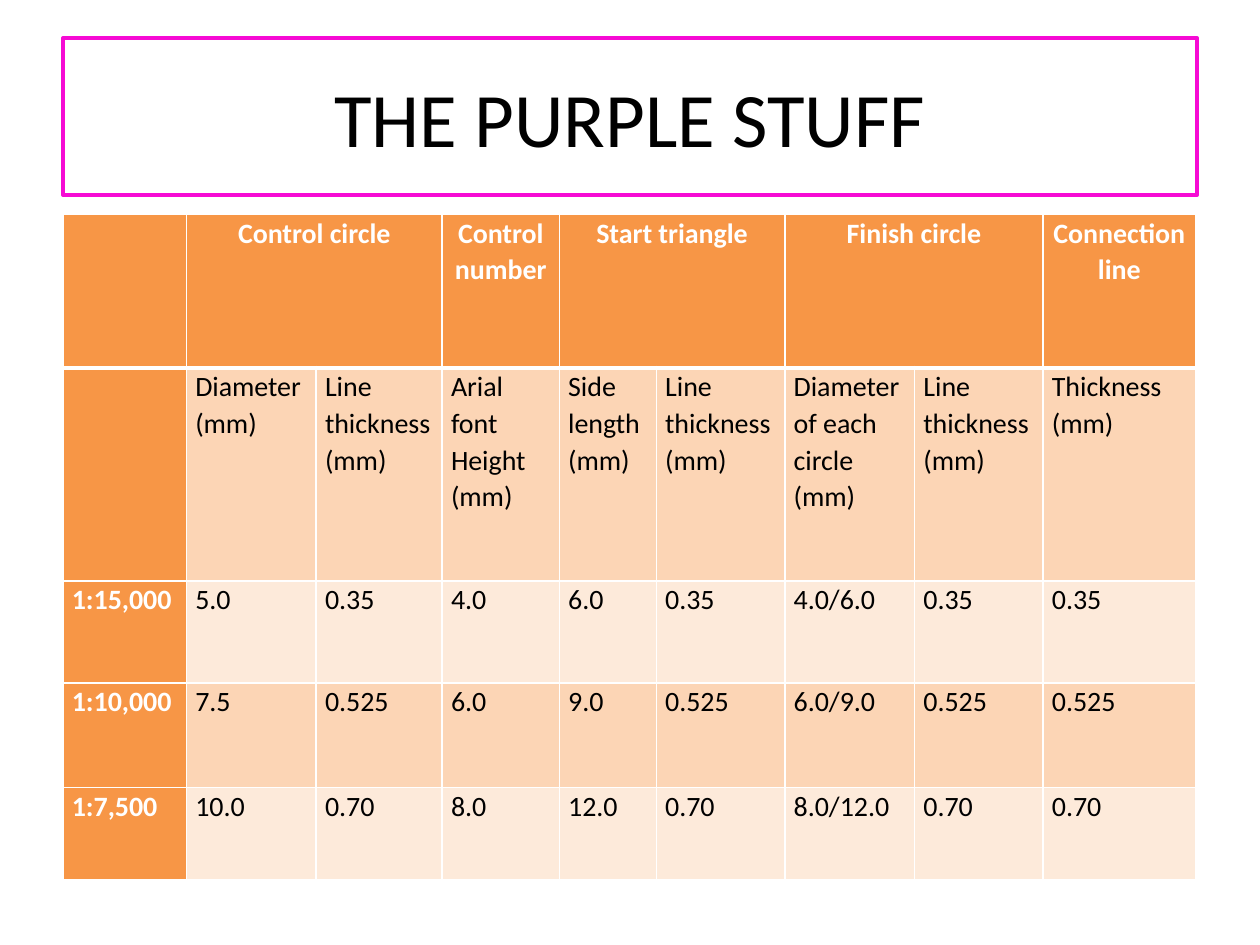
from lxml import etree
from pptx import Presentation
from pptx.dml.color import RGBColor
from pptx.enum.text import MSO_ANCHOR, PP_ALIGN
from pptx.oxml.ns import qn
from pptx.util import Inches, Pt

CENTER, LEFT = PP_ALIGN.CENTER, PP_ALIGN.LEFT
MIDDLE = MSO_ANCHOR.MIDDLE
COLORS = {
    "magenta": "F60AD4",
    "orange": "F79646",
    "peach": "FCD5B5",
    "cream": "FDEADA",
    "white": "FFFFFF",
    "black": "000000",
}


def rgb(name):
    return RGBColor.from_string(COLORS[name])


def write(tf, text, size=16, color="black", bold=False, align=LEFT, spacing=1.07):
    tf.word_wrap = True
    for i, line in enumerate(text.split("\n")):
        p = tf.paragraphs[0] if i == 0 else tf.add_paragraph()
        p.alignment = align
        p.line_spacing = spacing
        r = p.add_run()
        r.text = line
        r.font.name = "Calibri"
        r.font.size = Pt(size)
        r.font.bold = bold
        r.font.color.rgb = rgb(color)


prs = Presentation()
prs.slide_width, prs.slide_height = Inches(10), Inches(7.5)
W, H = prs.slide_width, prs.slide_height
s = prs.slides.add_slide(prs.slide_layouts[5])

title = s.shapes.title
title.left, title.top = int(W * 0.05), int(H * 0.04)
title.width, title.height = int(W * 0.9), Inches(1.25)
title.line.color.rgb = rgb("magenta")
title.line.width = Pt(2)
title.text_frame.vertical_anchor = MIDDLE
write(title.text_frame, "THE PURPLE STUFF", size=44, align=CENTER, spacing=1.0)

thickness = "Line thickness (mm)"
rows = [
    ["", "Control circle", "", "Control number", "Start triangle", "",
     "Finish circle", "", "Connection line"],
    ["", "Diameter (mm)", thickness, "Arial font\nHeight (mm)", "Side length (mm)",
     thickness, "Diameter of each circle (mm)", thickness, "Thickness (mm)"],
    ["1:15,000", "5.0", "0.35", "4.0", "6.0", "0.35", "4.0/6.0", "0.35", "0.35"],
    ["1:10,000", "7.5", "0.525", "6.0", "9.0", "0.525", "6.0/9.0", "0.525", "0.525"],
    ["1:7,500", "10.0", "0.70", "8.0", "12.0", "0.70", "8.0/12.0", "0.70", "0.70"],
]
col_widths = [0.98, 1.03, 1, 0.93, 0.77, 1.02, 1.03, 1.02, 1.21]
row_heights = [1.22, 1.69, 0.81, 0.83, 0.73]

frame = s.shapes.add_table(len(rows), len(col_widths), int(W * 0.05), Inches(1.7),
                           int(W * 0.9), Inches(sum(row_heights)))
table = frame.table
for col, width in zip(table.columns, col_widths):
    col.width = Inches(width)
for row, height in zip(table.rows, row_heights):
    row.height = Inches(height)
for c in (1, 4, 6):
    table.cell(0, c).merge(table.cell(0, c + 1))

for i, row in enumerate(rows):
    for j, text in enumerate(row):
        cell = table.cell(i, j)
        cell.margin_left = cell.margin_right = Inches(0.07)
        cell.margin_top = cell.margin_bottom = 0
        tcPr = cell._tc.get_or_add_tcPr()
        for side in ("L", "R", "T", "B"):
            thick = (i, side) in ((0, "B"), (1, "T"))
            ln = etree.SubElement(tcPr, qn(f"a:ln{side}"), w=str(Pt(3 if thick else 1)))
            fill = etree.SubElement(ln, qn("a:solidFill"))
            etree.SubElement(fill, qn("a:srgbClr"), val=COLORS["white"])
        header = i == 0 or j == 0
        band = "peach" if i % 2 else "cream"
        cell.fill.solid()
        cell.fill.fore_color.rgb = rgb("orange" if header else band)
        if text:
            write(cell.text_frame, text, color="white" if header else "black",
                  bold=header, align=CENTER if i == 0 else LEFT)

prs.save("out.pptx")
